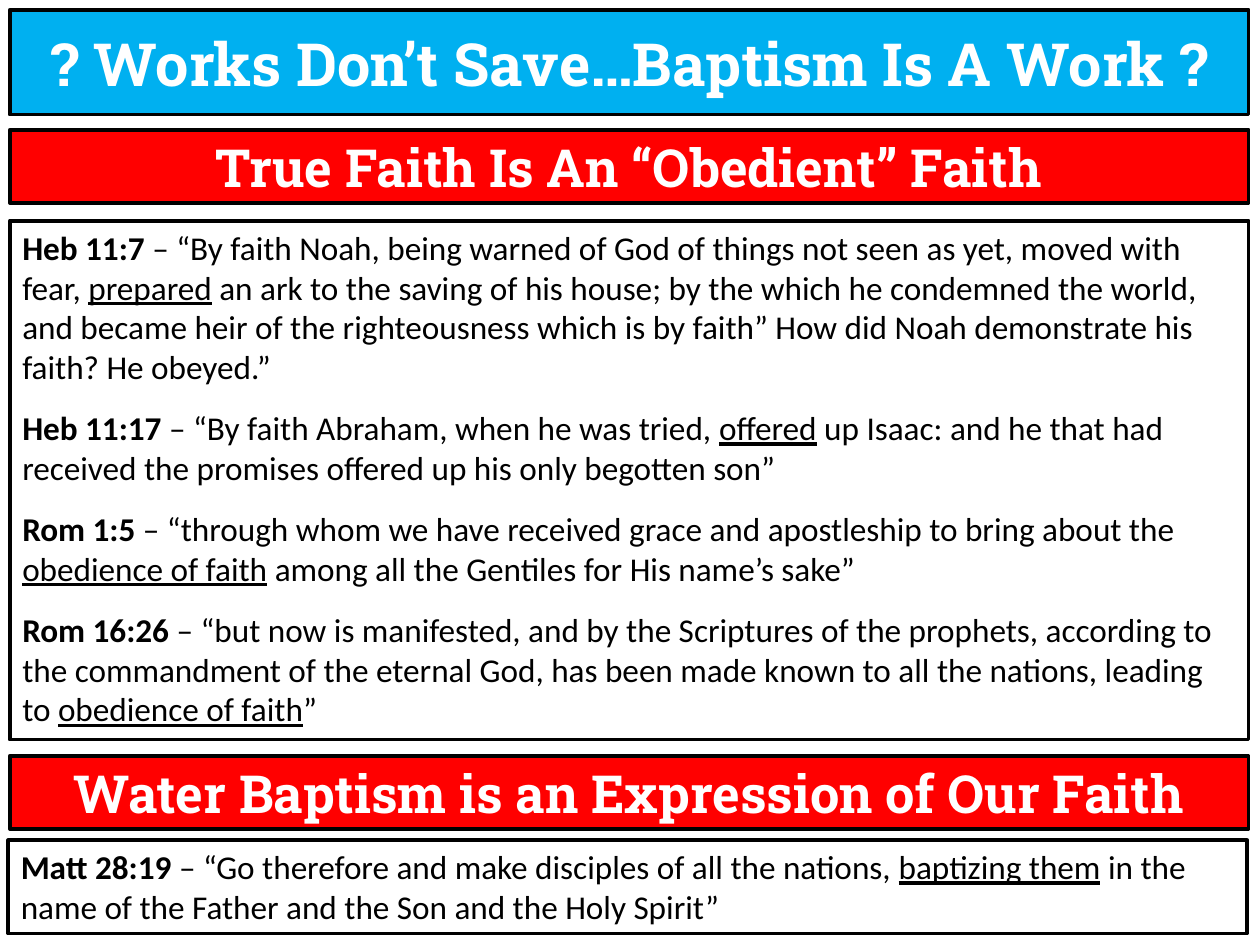
from pptx import Presentation
from pptx.dml.color import RGBColor
from pptx.enum.shapes import MSO_SHAPE as Shape
from pptx.enum.text import MSO_ANCHOR as Anchor, PP_ALIGN as Align
from pptx.util import Cm, Pt

COLORS = {"title": "00B0F0", "heading": "FF0000", "line": "000000",
          "light": "FFFFFF", "dark": "000000"}
LEFT, WIDTH = 0.2, 24.97

# Banners: text, top, height, font size, fill
BANNERS = [
    ("? Works Don’t Save…Baptism Is A Work ?", 0.2, 2.11, 34, "title"),
    ("True Faith Is An “Obedient” Faith", 2.62, 1.47, 30, "heading"),
    ("Water Baptism is an Expression of Our Faith", 15.24, 1.47, 30, "heading"),
]

# Verses: reference, text before, underlined words, text after
FAITH_VERSES = [
    ("Heb 11:7",
     " – “By faith Noah, being warned of God of things not seen as yet, moved with fear, ",
     "prepared",
     " an ark to the saving of his house; by the which he condemned the world, and became "
     "heir of the righteousness which is by faith” How did Noah demonstrate his faith? "
     "He obeyed.”"),
    ("Heb 11:17",
     " – “By faith Abraham, when he was tried, ",
     "offered",
     " up Isaac: and he that had received the promises offered up his only begotten son”"),
    ("Rom 1:5",
     " – “through whom we have received grace and apostleship to bring about the ",
     "obedience of faith",
     " among all the Gentiles for His name’s sake”"),
    ("Rom 16:26",
     " – “but now is manifested, and by the Scriptures of the prophets, according to the "
     "commandment of the eternal God, has been made known to all the nations, leading to ",
     "obedience of faith",
     "”"),
]
BAPTISM_VERSES = [
    ("Matt 28:19",
     " – “Go therefore and make disciples of all the nations, ",
     "baptizing them",
     " in the name of the Father and the Son and the Holy Spirit”"),
]

# Verse boxes: verses, left, top, height
VERSE_BOXES = [
    (FAITH_VERSES, LEFT, 4.45, 10.46),
    (BAPTISM_VERSES, 0.17, 16.94, 1.88),
]


def color(name):
    return RGBColor.from_string(COLORS[name])


def add_box(page, left, top, height, anchor, fill=None):
    box = page.shapes.add_shape(Shape.RECTANGLE, Cm(left), Cm(top), Cm(WIDTH), Cm(height))
    box.shadow.inherit = False
    box.line.color.rgb = color("line")
    box.line.width = Pt(2.25)
    if fill:
        box.fill.solid()
        box.fill.fore_color.rgb = color(fill)
    else:
        box.fill.background()
    box.text_frame.word_wrap = True
    box.text_frame.vertical_anchor = anchor
    return box.text_frame


def add_span(para, text, font, size, ink, bold=False, underline=False):
    span = para.add_run()
    span.text = text
    span.font.name = font
    span.font.size = Pt(size)
    span.font.bold = bold
    span.font.underline = underline
    span.font.color.rgb = color(ink)


def add_banner(page, text, top, height, size, fill):
    frame = add_box(page, LEFT, top, height, Anchor.MIDDLE, fill)
    para = frame.paragraphs[0]
    para.alignment = Align.CENTER
    add_span(para, text, "Roboto Slab", size, "light", bold=True)


def add_verses(page, verses, left, top, height):
    frame = add_box(page, left, top, height, Anchor.TOP)
    for index, parts in enumerate(verses):
        para = frame.add_paragraph() if index else frame.paragraphs[0]
        para.alignment = Align.LEFT
        if index:
            para.space_before = Pt(12)
        for position, text in enumerate(parts):
            add_span(para, text, "Calibri", 19, "dark",
                     bold=position == 0, underline=position == 2)


def main():
    deck = Presentation()
    deck.slide_width, deck.slide_height = Cm(25.4), Cm(19.05)
    page = deck.slides.add_slide(deck.slide_layouts[6])
    for banner in BANNERS:
        add_banner(page, *banner)
    for verse_box in VERSE_BOXES:
        add_verses(page, *verse_box)
    deck.save("out.pptx")


if __name__ == "__main__":
    main()
